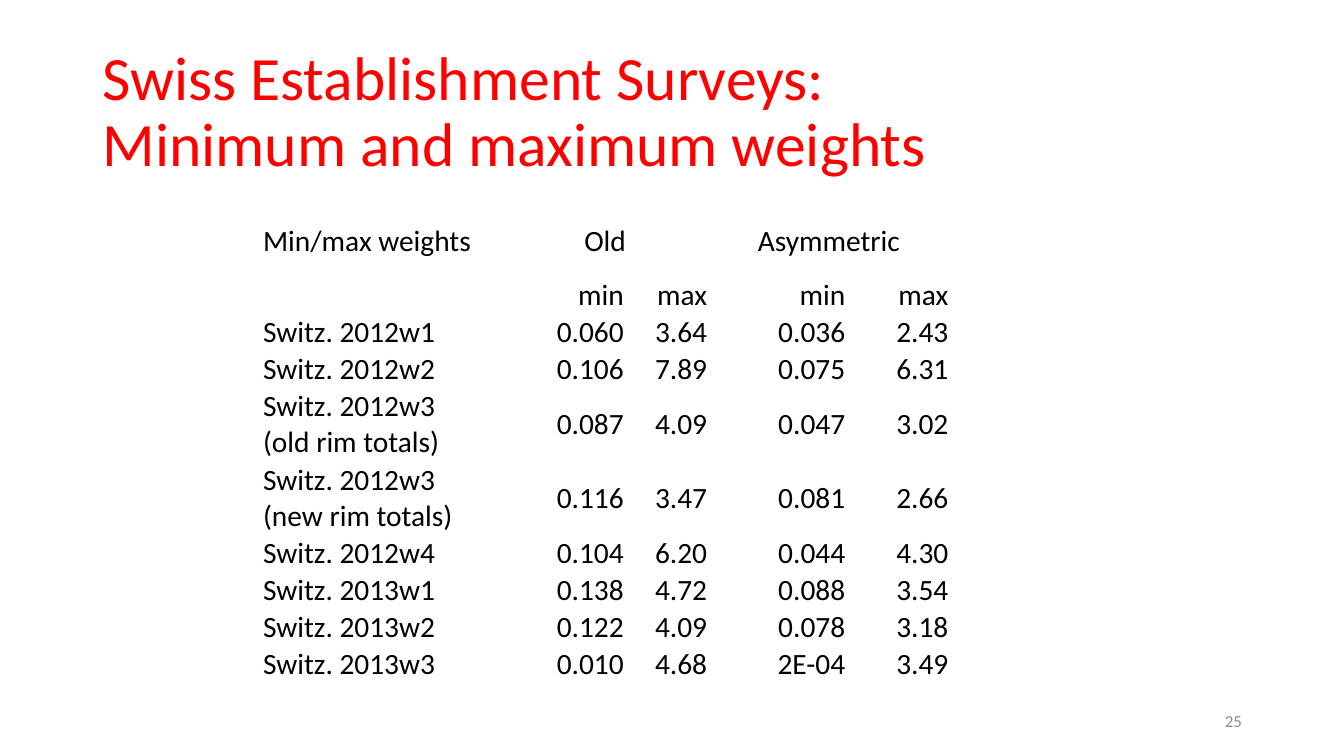
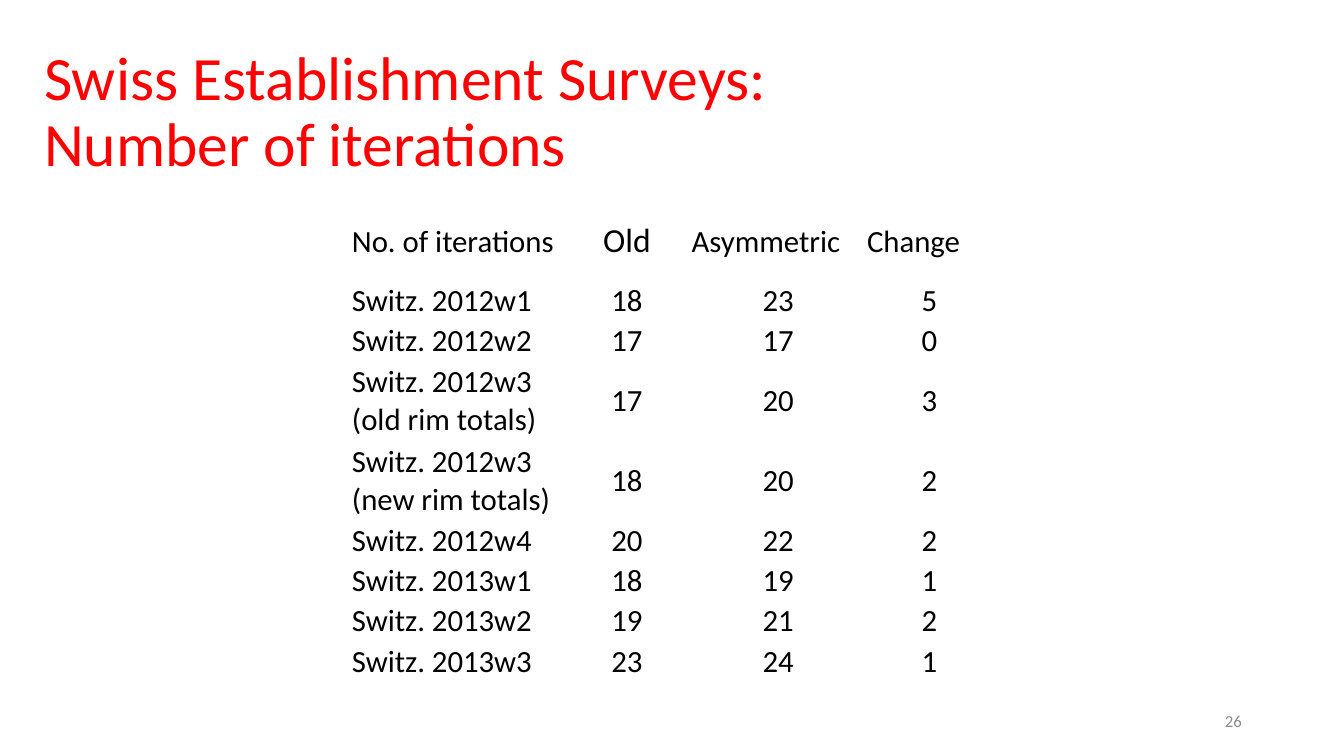
from pptx import Presentation
from pptx.dml.color import RGBColor
from pptx.enum.text import MSO_ANCHOR, MSO_AUTO_SIZE, PP_ALIGN
from pptx.util import Cm, Pt

COLORS = {"title": "FF0000", "text": "000000", "page": "8C8C8C"}
FONT = "Calibri"
LEFT, MID, RIGHT = PP_ALIGN.LEFT, PP_ALIGN.CENTER, PP_ALIGN.RIGHT
PAD = Cm(0.03)

WAVES = [
    "Switz. 2012w1",
    "Switz. 2012w2",
    "Switz. 2012w3 (old rim totals)",
    "Switz. 2012w3 (new rim totals)",
    "Switz. 2012w4",
    "Switz. 2013w1",
    "Switz. 2013w2",
    "Switz. 2013w3",
]
WEIGHTS = [
    ("0.060", "3.64", "0.036", "2.43"),
    ("0.106", "7.89", "0.075", "6.31"),
    ("0.087", "4.09", "0.047", "3.02"),
    ("0.116", "3.47", "0.081", "2.66"),
    ("0.104", "6.20", "0.044", "4.30"),
    ("0.138", "4.72", "0.088", "3.54"),
    ("0.122", "4.09", "0.078", "3.18"),
    ("0.010", "4.68", "2E-04", "3.49"),
]
COUNTS = [
    (18, 23, 5),
    (17, 17, 0),
    (17, 20, 3),
    (18, 20, 2),
    (20, 22, 2),
    (18, 19, 1),
    (19, 21, 2),
    (23, 24, 1),
]


def write(frame, text, size, color="text", align=LEFT, space=None):
    frame.word_wrap = True
    frame.text = text
    for para in frame.paragraphs:
        para.alignment = align
        para.line_spacing = space
        para.font.size = Pt(size)
        para.font.name = FONT
        para.font.color.rgb = RGBColor.from_string(COLORS[color])


def head(slide, box, text):
    title = slide.shapes.title
    title.left, title.top, title.width, title.height = map(Cm, box)
    frame = title.text_frame
    frame.auto_size = MSO_AUTO_SIZE.NONE
    frame.vertical_anchor = MSO_ANCHOR.MIDDLE
    write(frame, text, size=44, color="title", space=0.9)


def foot(slide, box, page):
    frame = slide.shapes.add_textbox(*map(Cm, box)).text_frame
    frame.vertical_anchor = MSO_ANCHOR.MIDDLE
    write(frame, str(page), size=12, color="page", align=RIGHT)


def grid(slide, spot, widths, heights, rows, size, align):
    box = map(Cm, (*spot, sum(widths), sum(heights)))
    table = slide.shapes.add_table(len(rows), len(widths), *box).table
    table.first_row = table.horz_banding = False
    for col, width in zip(table.columns, widths):
        col.width = Cm(width)
    for line, height, row in zip(table.rows, heights, rows):
        line.height = Cm(height)
        for num, (cell, value) in enumerate(zip(line.cells, row)):
            cell.fill.background()
            cell.vertical_anchor = MSO_ANCHOR.MIDDLE
            cell.margin_left = cell.margin_top = cell.margin_right = PAD
            cell.margin_bottom = 0
            write(cell.text_frame, str(value), size=size,
                  align=align if num else LEFT)
    return table


def scale(top, unit, labels):
    return [top] + [unit * (2 if "(" in name else 1) for name in labels]


def start(deck, box, text, page):
    slide = deck.slides.add_slide(deck.slide_layouts[5])
    head(slide, box, "Swiss Establishment Surveys:\v" + text)
    foot(slide, (23.93, 17.65, 7.62, 1.02), page)
    return slide


def weights(deck):
    slide = start(deck, (2.33, 1.02, 29.21, 3.68),
                  "Minimum and maximum weights", 25)
    rows = [("Min/max weights", "Old", "", "Asymmetric", ""),
            ("", "min", "max", "min", "max")]
    rows += [(name.replace(" (", "\n("), *vals)
             for name, vals in zip(WAVES, WEIGHTS)]
    table = grid(slide, (6.6, 5.16), (6.05, 3.1, 2.1, 3.48, 2.6),
                 scale(1.8, 0.93, ["", *WAVES]), rows, 21, RIGHT)
    for col in (1, 3):
        cell = table.cell(0, col)
        cell.merge(table.cell(0, col + 1))
        cell.text_frame.paragraphs[0].alignment = MID


def counts(deck):
    slide = start(deck, (0.86, 1.02, 32.13, 3.68),
                  "Number of iterations", 26)
    rows = [("No. of iterations", "Old", "Asymmetric", "Change")]
    rows += [(name, *vals) for name, vals in zip(WAVES, COUNTS)]
    table = grid(slide, (8.84, 5.08), (5.36, 3.2, 4.42, 3.2),
                 scale(1.98, 1.01, WAVES), rows, 22, MID)
    table.cell(0, 1).text_frame.paragraphs[0].font.size = Pt(24)
    for col in (2, 3):
        table.cell(0, col).text_frame.paragraphs[0].alignment = LEFT


def main():
    deck = Presentation()
    deck.slide_width, deck.slide_height = Cm(33.87), Cm(19.05)
    weights(deck)
    counts(deck)
    deck.save("out.pptx")


if __name__ == "__main__":
    main()
